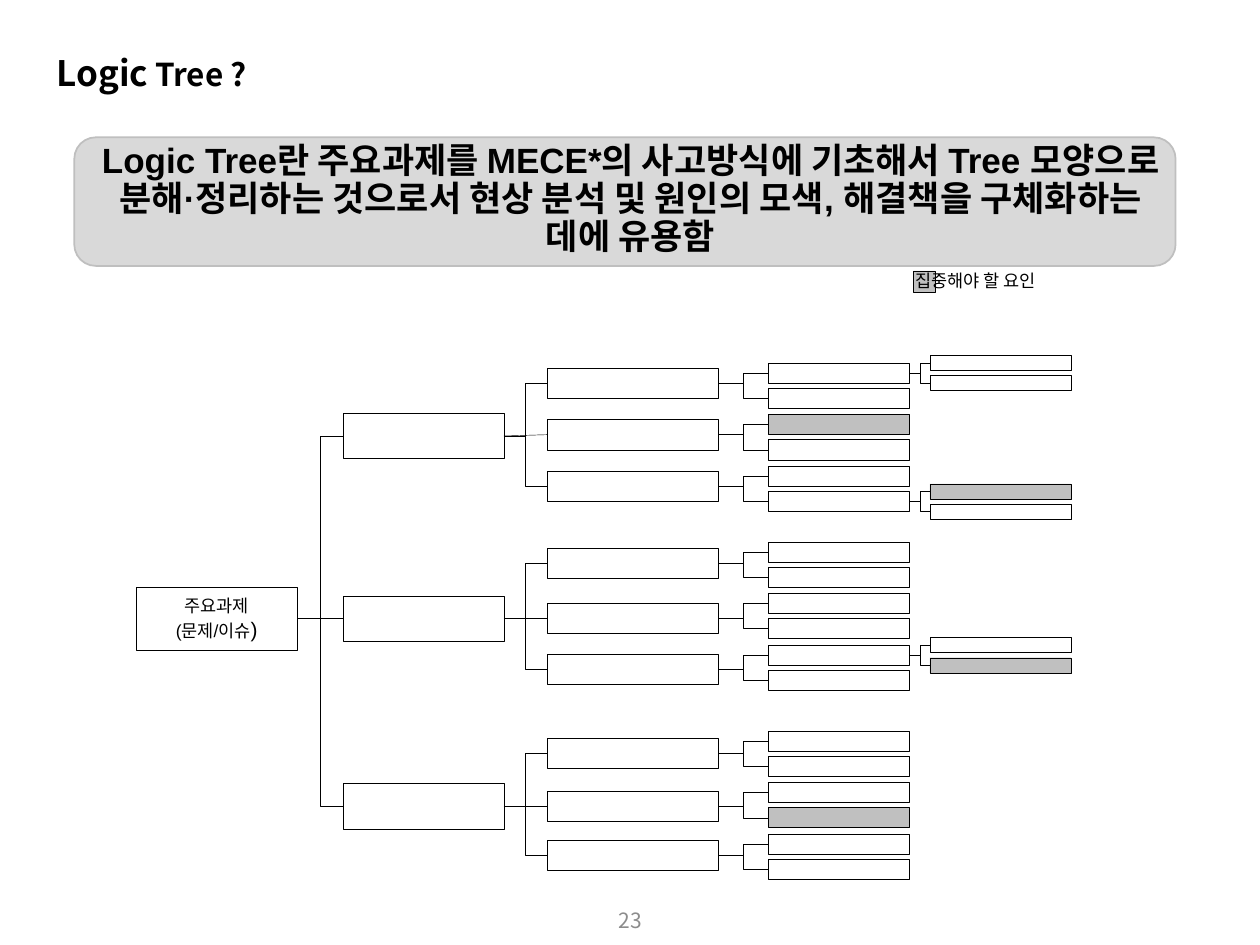
from lxml import etree
from pptx import Presentation
from pptx.dml.color import RGBColor
from pptx.enum.shapes import MSO_CONNECTOR, MSO_SHAPE
from pptx.enum.text import MSO_ANCHOR, PP_ALIGN
from pptx.oxml.ns import qn
from pptx.util import Inches, Pt

RECT, ROUNDED = MSO_SHAPE.RECTANGLE, MSO_SHAPE.ROUNDED_RECTANGLE
STRAIGHT, ELBOW = MSO_CONNECTOR.STRAIGHT, MSO_CONNECTOR.ELBOW
LEFT, CENTER = PP_ALIGN.LEFT, PP_ALIGN.CENTER
TOP, MIDDLE = MSO_ANCHOR.TOP, MSO_ANCHOR.MIDDLE
BLACK, WHITE, FOCUS = "000000", "FFFFFF", "C0C0C0"
SANS, KOREAN = "Arial", "Noto Sans CJK KR"

TITLE = [("Logic", 20), (" Tree ?", 18)]
DEFINITION = [("Logic Tree란 주요과제를 MECE*의 사고방식에 기초해서 Tree 모양으로 "
               "분해·정리하는 것으로서 현상 분석 및 원인의 모색, "
               "해결책을 구체화하는 데에 유용함", 20)]
ISSUE = [("주요과제\v(문제/이슈", 10), (")", 12)]
LEGEND = [("집중해야 할 요인", 10)]
PAGE_NUMBER = [("23", 12)]

# column: left, width, height
ISSUE_COL = (1.08, 1.28, 0.5)
BRANCH_COL = (2.72, 1.28, 0.36)
FACTOR_COL = (4.34, 1.36, 0.24)
CAUSE_COL = (6.1, 1.12, 0.16)
DETAIL_COL = (7.38, 1.12, 0.12)
ISSUE_Y = 4.91
CAUSE_GAP, DETAIL_GAP, PAIR_STEP = 0.2, 0.16, 0.41

# branch centre, factor centres, centre of the first cause
BRANCHES = [
    (3.46, (3.04, 3.45, 3.86), 2.96),
    (4.91, (4.47, 4.91, 5.31), 4.38),
    (6.4, (5.98, 6.4, 6.79), 5.88),
]
FOCUS_CAUSES = {(0, 1, 0), (2, 1, 1)}
DETAILS = {
    (0, 0, 0): (WHITE, WHITE),
    (0, 2, 1): (FOCUS, WHITE),
    (1, 2, 0): (WHITE, FOCUS),
}


def rgb(value):
    return RGBColor.from_string(value)


def write(frame, pieces, font=SANS, color=BLACK, bold=False, align=CENTER,
          anchor=MIDDLE, wrap=True):
    frame.word_wrap = wrap
    frame.vertical_anchor = anchor
    frame.text = pieces[0][0]
    paragraph = frame.paragraphs[0]
    paragraph.alignment = align
    for words, _ in pieces[1:]:
        paragraph.add_run().text = words
    sizes = [pieces[0][1]] * (len(paragraph.runs) - len(pieces) + 1)
    sizes += [size for _, size in pieces[1:]]
    for run, size in zip(paragraph.runs, sizes):
        run.font.name, run.font.size, run.font.bold = font, Pt(size), bold
        run.font.color.rgb = rgb(color)
    return paragraph


def add_text(slide, area, pieces, **style):
    box = slide.shapes.add_textbox(*map(Inches, area))
    return write(box.text_frame, pieces, **style)


def add_box(slide, area, fill, outline=BLACK, weight=0.25, preset=RECT):
    box = slide.shapes.add_shape(preset, *map(Inches, area))
    box.shadow.inherit = False
    box.fill.solid()
    box.fill.fore_color.rgb = rgb(fill)
    box.line.color.rgb = rgb(outline)
    box.line.width = Pt(weight)
    return box


def add_node(slide, column, center, fill=WHITE):
    left, width, height = column
    return add_box(slide, (left, center - height / 2, width, height), fill)


def link(slide, parent_col, parent_y, child_col, child_y):
    kind = STRAIGHT if abs(child_y - parent_y) < 0.02 else ELBOW
    ends = (parent_col[0] + parent_col[1], parent_y, child_col[0], child_y)
    line = slide.shapes.add_connector(kind, *map(Inches, ends))
    line.line.color.rgb = rgb(BLACK)
    line.line.width = Pt(0.25)
    etree.SubElement(line._element.spPr, qn("a:effectLst"))


def add_child(slide, parent_col, parent_y, column, center, fill=WHITE):
    add_node(slide, column, center, fill)
    link(slide, parent_col, parent_y, column, center)


def draw_tree(slide):
    issue = add_node(slide, ISSUE_COL, ISSUE_Y)
    write(issue.text_frame, ISSUE, wrap=False)
    for b, (branch_y, factors, first_cause) in enumerate(BRANCHES):
        add_child(slide, ISSUE_COL, ISSUE_Y, BRANCH_COL, branch_y)
        for f, factor_y in enumerate(factors):
            add_child(slide, BRANCH_COL, branch_y, FACTOR_COL, factor_y)
            for c in range(2):
                key = (b, f, c)
                cause_y = first_cause + f * PAIR_STEP + c * CAUSE_GAP
                add_child(slide, FACTOR_COL, factor_y, CAUSE_COL, cause_y,
                          FOCUS if key in FOCUS_CAUSES else WHITE)
                for d, fill in enumerate(DETAILS.get(key, ())):
                    detail_y = cause_y + (d - 0.5) * DETAIL_GAP
                    add_child(slide, CAUSE_COL, cause_y, DETAIL_COL, detail_y, fill)


def main():
    deck = Presentation()
    deck.slide_width, deck.slide_height = Inches(10), Inches(7.5)
    slide = deck.slides.add_slide(deck.slide_layouts[6])

    add_text(slide, (3.88, 7.1, 2.25, 0.4), PAGE_NUMBER, font=KOREAN, color="8C8C8C")
    add_box(slide, (0.59, 1.09, 8.74, 1.02), "D9D9D9", "BFBFBF", 1, ROUNDED)
    definition = add_text(slide, (0.67, 1.09, 8.67, 0.96), DEFINITION,
                          bold=True, anchor=TOP)
    definition.line_spacing = 0.9
    draw_tree(slide)
    add_box(slide, (7.25, 2.15, 0.17, 0.17), FOCUS)
    add_text(slide, (7.17, 2.1, 1.92, 0.25), LEGEND, align=LEFT)
    add_text(slide, (0.35, 0.36, 1.72, 0.44), TITLE, font=KOREAN, bold=True,
             align=LEFT, anchor=TOP, wrap=False)
    deck.save("out.pptx")


if __name__ == "__main__":
    main()
